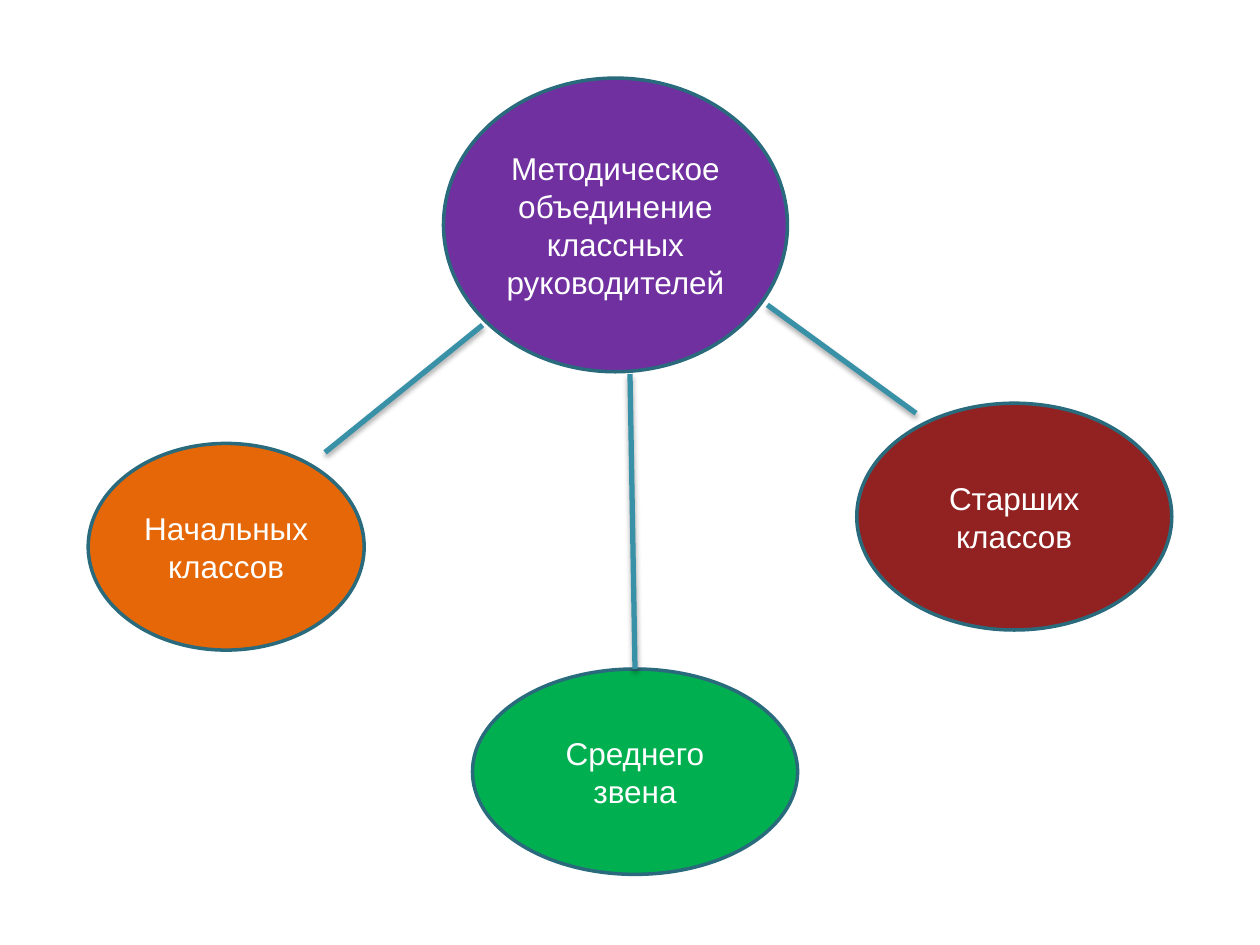
"""Build a slide linking the class teachers' association to its three school levels."""
from typing import NamedTuple

from lxml import etree
from pptx import Presentation
from pptx.dml.color import RGBColor
from pptx.enum.shapes import MSO_CONNECTOR, MSO_SHAPE
from pptx.enum.text import MSO_ANCHOR, PP_ALIGN
from pptx.oxml.ns import qn
from pptx.util import Inches, Pt

ELLIPSE = MSO_SHAPE.OVAL
STRAIGHT = MSO_CONNECTOR.STRAIGHT
MIDDLE = MSO_ANCHOR.MIDDLE
CENTER = PP_ALIGN.CENTER

SLIDE_WIDTH = Inches(10)
SLIDE_HEIGHT = Inches(7.5)
FONT_NAME = "Arial"
TEXT_COLOR = "FFFFFF"
OUTLINE_COLOR = "296B7C"
LINK_COLOR = "3891A7"
SHADOW_COLOR = "000000"


class Group(NamedTuple):
    text: str
    left: float
    top: float
    width: float
    height: float
    fill: str


class Link(NamedTuple):
    start_x: float
    start_y: float
    end_x: float
    end_y: float


GROUPS = [
    Group("Методическое объединение классных руководителей",
          35.2, 8.27, 27.3, 31.07, "7030A0"),
    Group("Среднего звена", 37.5, 70.8, 25.8, 21.73, "00B050"),
    Group("Старших классов", 68, 42.67, 25, 24, "922222"),
    Group("Начальных классов", 7, 46.93, 21.9, 21.87, "E66708"),
]
LINKS = [
    Link(25.8, 47.87, 38.3, 34.4),
    Link(50.4, 70.8, 50, 39.6),
    Link(72.7, 43.73, 60.9, 32.27),
]


def color(value: str) -> RGBColor:
    return RGBColor.from_string(value)


def across(percent: float) -> int:
    return round(SLIDE_WIDTH * percent / 100)


def down(percent: float) -> int:
    return round(SLIDE_HEIGHT * percent / 100)


def add_group(slide, group: Group) -> None:
    shape = slide.shapes.add_shape(
        ELLIPSE, across(group.left), down(group.top),
        across(group.width), down(group.height))
    shape.shadow.inherit = False
    shape.fill.solid()
    shape.fill.fore_color.rgb = color(group.fill)
    shape.line.color.rgb = color(OUTLINE_COLOR)
    shape.line.width = Pt(2)
    frame = shape.text_frame
    frame.word_wrap = True
    frame.vertical_anchor = MIDDLE
    paragraph = frame.paragraphs[0]
    paragraph.text = group.text
    paragraph.alignment = CENTER
    paragraph.font.name = FONT_NAME
    paragraph.font.size = Pt(18)
    paragraph.font.color.rgb = color(TEXT_COLOR)


def add_shadow(connector) -> None:
    properties = connector._element.spPr
    effects = etree.SubElement(properties, qn("a:effectLst"))
    shadow = etree.SubElement(
        effects, qn("a:outerShdw"), blurRad=str(Pt(3.1)), dist=str(Pt(1.8)),
        dir="5400000", rotWithShape="0")
    shade = etree.SubElement(shadow, qn("a:srgbClr"), val=SHADOW_COLOR)
    etree.SubElement(shade, qn("a:alpha"), val="35000")


def add_link(slide, link: Link) -> None:
    connector = slide.shapes.add_connector(
        STRAIGHT, across(link.start_x), down(link.start_y),
        across(link.end_x), down(link.end_y))
    connector.line.color.rgb = color(LINK_COLOR)
    connector.line.width = Pt(3)
    add_shadow(connector)


def main() -> None:
    presentation = Presentation()
    presentation.slide_width = SLIDE_WIDTH
    presentation.slide_height = SLIDE_HEIGHT
    slide = presentation.slides.add_slide(presentation.slide_layouts[6])
    for group in GROUPS:
        add_group(slide, group)
    for link in LINKS:
        add_link(slide, link)
    presentation.save("out.pptx")


if __name__ == "__main__":
    main()
